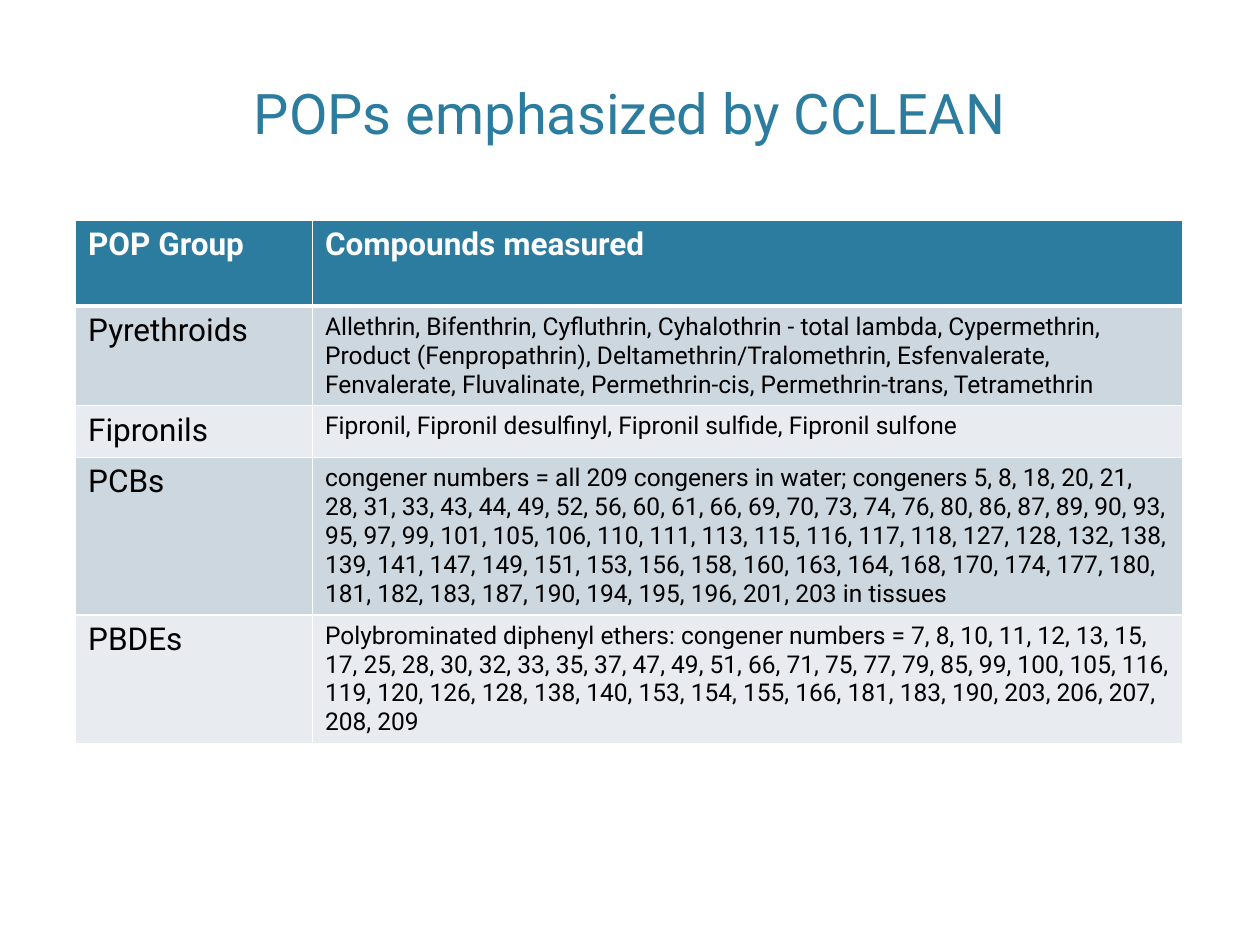
"""Build a slide with a table of the POP groups emphasized by CCLEAN."""
from lxml.etree import SubElement
from pptx import Presentation
from pptx.dml.color import RGBColor
from pptx.enum.text import MSO_ANCHOR, PP_ALIGN
from pptx.oxml.ns import qn
from pptx.util import Inches, Pt

FONT = "Roboto"
COLORS = {"accent": "2C7C9F", "odd": "CDD7DF", "even": "E8ECF0",
          "white": "FFFFFF", "text": "000000"}
TITLE = "POPs emphasized by CCLEAN"
ROWS = [
    ("POP Group", "Compounds measured"),
    ("Pyrethroids",
     "Allethrin, Bifenthrin, Cyfluthrin, Cyhalothrin - total lambda, Cypermethrin, "
     "Product (Fenpropathrin), Deltamethrin/Tralomethrin, Esfenvalerate, Fenvalerate, "
     "Fluvalinate, Permethrin-cis, Permethrin-trans, Tetramethrin"),
    ("Fipronils", "Fipronil, Fipronil desulfinyl, Fipronil sulfide, Fipronil sulfone"),
    ("PCBs",
     "congener numbers = all 209 congeners in water; congeners 5, 8, 18, 20, 21, 28, 31, "
     "33, 43, 44, 49, 52, 56, 60, 61, 66, 69, 70, 73, 74, 76, 80, 86, 87, 89, 90, 93, 95, "
     "97, 99, 101, 105, 106, 110, 111, 113, 115, 116, 117, 118, 127, 128, 132, 138, 139, "
     "141, 147, 149, 151, 153, 156, 158, 160, 163, 164, 168, 170, 174, 177, 180, 181, 182, "
     "183, 187, 190, 194, 195, 196, 201, 203 in tissues"),
    ("PBDEs",
     "Polybrominated diphenyl ethers: congener numbers = 7, 8, 10, 11, 12, 13, 15, 17, 25, "
     "28, 30, 32, 33, 35, 37, 47, 49, 51, 66, 71, 75, 77, 79, 85, 99, 100, 105, 116, 119, "
     "120, 126, 128, 138, 140, 153, 154, 155, 166, 181, 183, 190, 203, 206, 207, 208, 209"),
]
COL_WIDTHS = (1.88, 6.91)
ROW_HEIGHTS = (0.68, 0.79, 0.41, 1.25, 1.02)
LEFT, WIDTH = 0.6, 8.8


def rgb(name):
    return RGBColor.from_string(COLORS[name])


def style_text(p, size, color, bold=False):
    p.font.name, p.font.size, p.font.bold = FONT, Pt(size), bold
    p.font.color.rgb = rgb(color)


def add_borders(cell, top, bottom):
    tc_pr = cell._tc.get_or_add_tcPr()
    for side, width in (("L", 1), ("R", 1), ("T", top), ("B", bottom)):
        ln = SubElement(tc_pr, qn(f"a:ln{side}"), w=str(Pt(width)))
        fill = SubElement(ln, qn("a:solidFill"))
        SubElement(fill, qn("a:srgbClr"), val=COLORS["white"])


def add_title(slide):
    sp = slide.shapes.add_textbox(Inches(LEFT), Inches(0.38), Inches(WIDTH), Inches(0.83))
    tf = sp.text_frame
    tf.word_wrap = True
    tf.vertical_anchor = MSO_ANCHOR.BOTTOM
    p = tf.paragraphs[0]
    p.text, p.alignment = TITLE, PP_ALIGN.CENTER
    style_text(p, 32, "accent")


def add_pop_table(slide):
    table = slide.shapes.add_table(
        len(ROWS), len(COL_WIDTHS), Inches(LEFT), Inches(1.75),
        Inches(sum(COL_WIDTHS)), Inches(sum(ROW_HEIGHTS))).table
    table.horz_banding = False
    for column, width in zip(table.columns, COL_WIDTHS):
        column.width = Inches(width)
    for i, (texts, height) in enumerate(zip(ROWS, ROW_HEIGHTS)):
        table.rows[i].height = Inches(height)
        header = i == 0
        fill = "accent" if header else "odd" if i % 2 else "even"
        for j, text in enumerate(texts):
            cell = table.cell(i, j)
            add_borders(cell, 3 if i == 1 else 1, 3 if header else 1)
            cell.fill.solid()
            cell.fill.fore_color.rgb = rgb(fill)
            cell.text = text
            style_text(cell.text_frame.paragraphs[0], 18 if header or j == 0 else 14,
                       "white" if header else "text", header)


def main():
    prs = Presentation()
    prs.slide_width, prs.slide_height = Inches(10), Inches(7.5)
    slide = prs.slides.add_slide(prs.slide_layouts[6])
    add_pop_table(slide)
    add_title(slide)
    prs.save("out.pptx")


if __name__ == "__main__":
    main()
